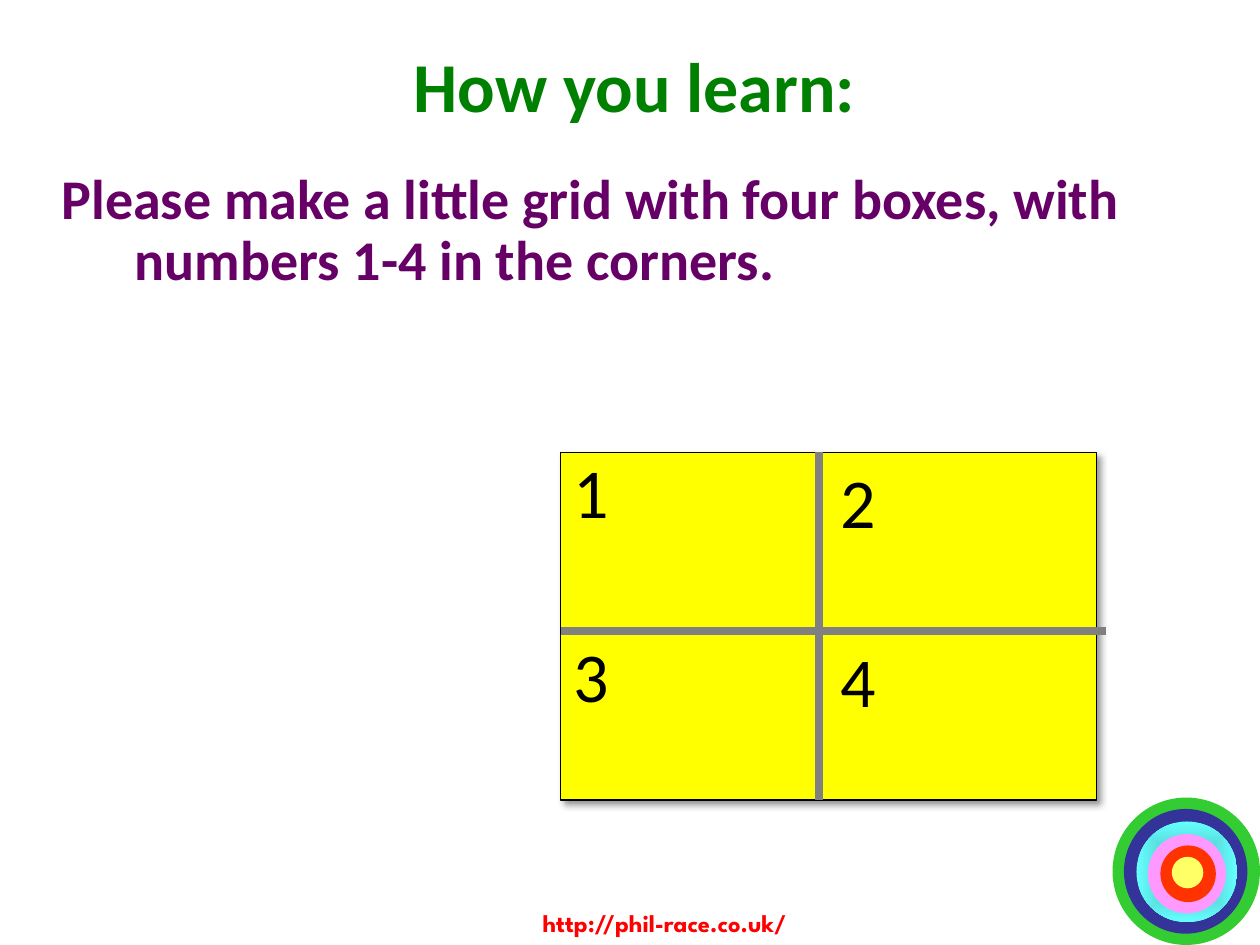
import lxml.etree
import pptx
import pptx.dml.color
import pptx.enum.shapes
import pptx.enum.text
import pptx.oxml
import pptx.oxml.ns
import pptx.util

Inches = pptx.util.Inches
Pt = pptx.util.Pt
Shapes = pptx.enum.shapes.MSO_SHAPE
Align = pptx.enum.text.PP_ALIGN
Anchor = pptx.enum.text.MSO_ANCHOR
qn = pptx.oxml.ns.qn

THEME = {
    "title": {"name": "Calibri", "size": Pt(40), "bold": True, "color": "008000"},
    "body": {"name": "Calibri", "size": Pt(32), "bold": True, "color": "660066"},
    "number": {"name": "Calibri", "size": Pt(40), "bold": False, "color": "000000"},
    "address": {"name": "League Spartan", "size": Pt(14), "bold": True, "color": "FF0000"},
    "grid_fill": "FFFF00",
    "grid_edge": "000000",
    "divider": "808080",
}
RINGS = [
    ((8.83, 6.33, 1.17, 1.17), "33CC33"),
    ((8.92, 6.42, 0.98, 0.99), "333399"),
    ((9.02, 6.52, 0.8, 0.8), ("47B2B2", "66FFFF")),
    ((9.11, 6.62, 0.62, 0.63), "FF99FF"),
    ((9.21, 6.71, 0.44, 0.45), "FF3300"),
    ((9.3, 6.8, 0.25, 0.25), "FFFF66"),
]
CENTRED = {"alignment": Align.CENTER}
HANGING = {"line_spacing": 0.9}
TEXTS = [
    ("http://phil-race.co.uk/", (3.83, 7.16, 2.89, 0.34), "address", CENTRED, {}),
    ("How you learn:", (0.27, 0.21, 9.53, 1.02), "title",
     {"alignment": Align.CENTER, "line_spacing": 0.85},
     {"vertical_anchor": Anchor.MIDDLE}),
    ("Please make a little grid with four boxes, with numbers 1-4 in the corners.",
     (0.39, 1.31, 9.41, 5.11), "body", HANGING, {}),
]
GRID = (4.45, 3.59, 4.25, 2.76)
DIVIDERS = [((6.5, 3.59), (6.5, 6.35)), ((4.45, 5.01), (8.78, 5.01))]
NUMBERS = [
    ("1", (4.45, 3.51, 0.63, 0.78), True),
    ("2", (6.57, 3.59, 0.48, 0.78), False),
    ("3", (4.45, 4.97, 1.01, 0.78), True),
    ("4", (6.57, 5.01, 0.48, 0.78), False),
]
NAMESPACE = 'xmlns:a="http://schemas.openxmlformats.org/drawingml/2006/main"'
SHADOW = (
    f'<a:effectLst {NAMESPACE}><a:outerShdw blurRad="{Pt(4)}" dist="{Pt(3)}" '
    'dir="2700000" algn="tl" rotWithShape="0"><a:srgbClr val="000000">'
    '<a:alpha val="40000"/></a:srgbClr></a:outerShdw></a:effectLst>'
)
RADIAL = (
    '<a:path {} path="shape"><a:fillToRect l="50000" t="50000" '
    'r="50000" b="50000"/></a:path>'
).format(NAMESPACE)


def colour(value):
    """Turn a hex string into a colour."""
    return pptx.dml.color.RGBColor.from_string(value)


def apply(target, values):
    """Set each named format value on the target."""
    for name, value in values.items():
        setattr(target, name, value)


def add_text(page, text, place, style, para_format, frame_format):
    """Add a text box with one styled paragraph."""
    frame = page.shapes.add_textbox(*map(Inches, place)).text_frame
    apply(frame, {"word_wrap": True, **frame_format})
    para = frame.paragraphs[0]
    apply(para, para_format)
    if para_format is HANGING:
        properties = para._p.get_or_add_pPr()
        properties.set("marL", str(Inches(0.58)))
        properties.set("indent", str(Inches(-0.58)))
    span = para.add_run()
    span.text = text
    font = dict(THEME[style])
    span.font.color.rgb = colour(font.pop("color"))
    apply(span.font, font)


def add_box(page, kind, place, fill):
    """Add a shadowless shape with a solid or radial fill."""
    box = page.shapes.add_shape(kind, *map(Inches, place))
    box.shadow.inherit = False
    box.line.fill.background()
    if isinstance(fill, tuple):
        box.fill.gradient()
        for stop, value in zip(box.fill.gradient_stops, fill):
            stop.color.rgb = colour(value)
        gradient = box._element.spPr.find(qn("a:gradFill"))
        linear = gradient.find(qn("a:lin"))
        gradient.replace(linear, pptx.oxml.parse_xml(RADIAL))
    else:
        box.fill.solid()
        box.fill.fore_color.rgb = colour(fill)
    return box


def add_grid(page):
    """Add the shadowed grid, its dividers and its numbers."""
    box = add_box(page, Shapes.RECTANGLE, GRID, THEME["grid_fill"])
    box.line.color.rgb = colour(THEME["grid_edge"])
    box.line.width = Pt(0.75)
    properties = box._element.spPr
    properties.replace(properties.find(qn("a:effectLst")), pptx.oxml.parse_xml(SHADOW))
    for start, end in DIVIDERS:
        divider = page.shapes.add_connector(
            pptx.enum.shapes.MSO_CONNECTOR.STRAIGHT, *map(Inches, start + end))
        divider.line.color.rgb = colour(THEME["divider"])
        divider.line.width = Pt(4.5)
        lxml.etree.SubElement(divider._element.spPr, qn("a:effectLst"))
    for text, place, wrap in NUMBERS:
        add_text(page, text, place, "number", {}, {"word_wrap": wrap})


def main():
    """Build and save the slide."""
    deck = pptx.Presentation()
    apply(deck, {"slide_width": Inches(10), "slide_height": Inches(7.5)})
    page = deck.slides.add_slide(deck.slide_layouts[6])
    for place, fill in RINGS:
        add_box(page, Shapes.OVAL, place, fill)
    for text in TEXTS:
        add_text(page, *text)
    add_grid(page)
    deck.save("out.pptx")


if __name__ == "__main__":
    main()
